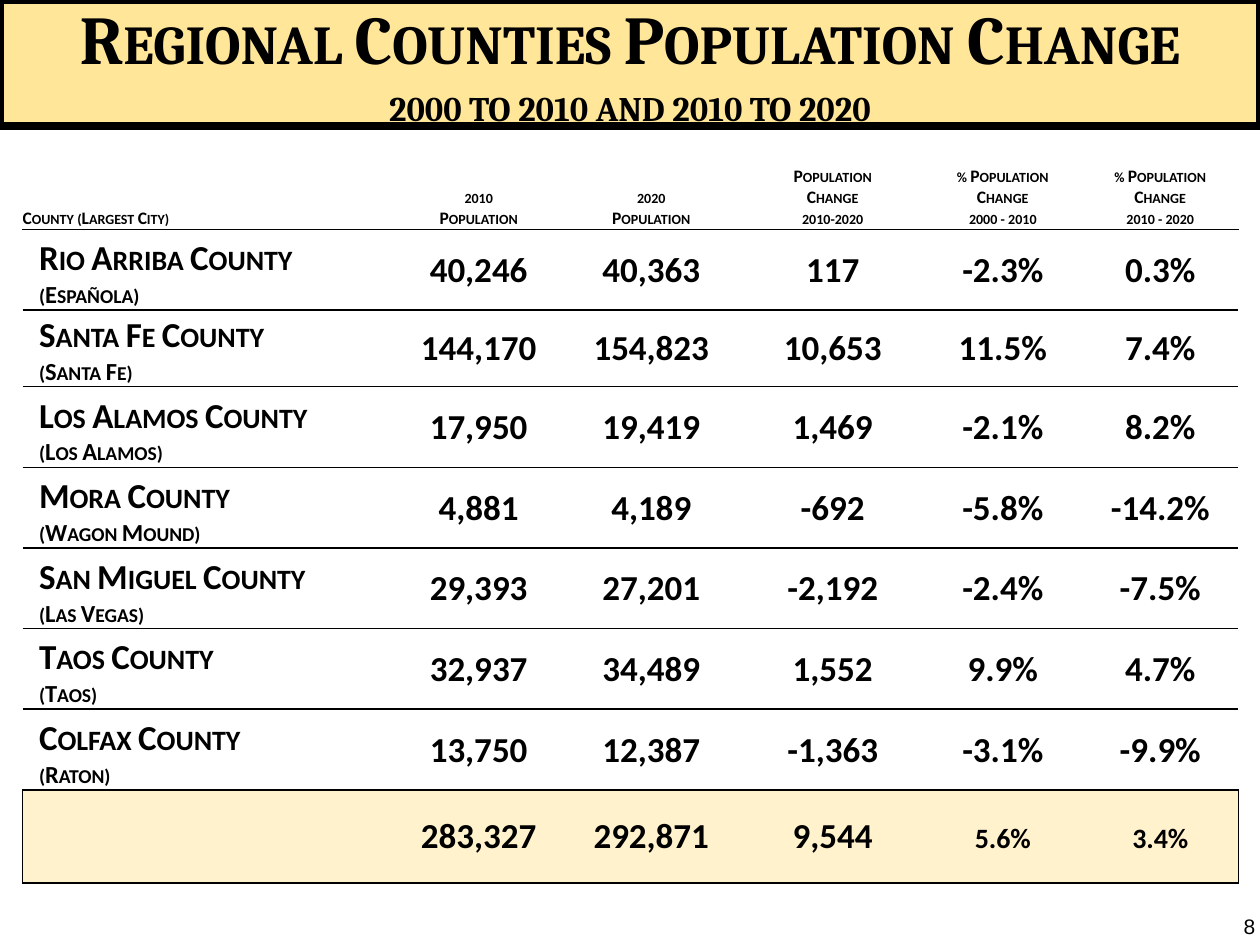
from typing import NamedTuple

from lxml.etree import SubElement
from pptx import Presentation
from pptx.dml.color import RGBColor
from pptx.enum.shapes import MSO_SHAPE as Shape
from pptx.enum.text import MSO_ANCHOR as Anchor, PP_ALIGN as Align
from pptx.oxml.ns import qn
from pptx.util import Inches, Pt

BLACK = RGBColor(0, 0, 0)
WHITE = RGBColor(0xFF, 0xFF, 0xFF)
GOLD = RGBColor(0xFF, 0xE6, 0x99)
CREAM = RGBColor(0xFF, 0xF2, 0xCC)

COLUMN_WIDTHS = (2.97, 1.3, 1.44, 1.44, 1.26, 1.24)
ROW_HEIGHTS = (0.74, 0.64, 0.61, 0.64, 0.64, 0.64, 0.64, 0.64, 0.74)


class Line(NamedTuple):
    text: str
    size: float
    small_caps: bool = True
    font: str = "Calibri"
    bold: bool = True


class County(NamedTuple):
    name: str
    largest_city: str
    figures: tuple[str, ...]


HEADINGS = (
    ("County (Largest City)",),
    ("2010", "Population"),
    ("2020", "Population"),
    ("Population", "Change", "2010-2020"),
    ("% Population", "Change", "2000 - 2010"),
    ("% Population", "Change", "2010 - 2020"),
)
COUNTIES = (
    County("Rio Arriba", "Española", ("40,246", "40,363", "117", "-2.3%", "0.3%")),
    County("Santa Fe", "Santa Fe", ("144,170", "154,823", "10,653", "11.5%", "7.4%")),
    County("Los Alamos", "Los Alamos", ("17,950", "19,419", "1,469", "-2.1%", "8.2%")),
    County("Mora", "Wagon Mound", ("4,881", "4,189", "-692", "-5.8%", "-14.2%")),
    County("San Miguel", "Las Vegas", ("29,393", "27,201", "-2,192", "-2.4%", "-7.5%")),
    County("Taos", "Taos", ("32,937", "34,489", "1,552", "9.9%", "4.7%")),
    County("Colfax", "Raton", ("13,750", "12,387", "-1,363", "-3.1%", "-9.9%")),
)
TOTALS = ("283,327", "292,871", "9,544", "5.6%", "3.4%")


def write(frame, lines: list[Line], align: Align, indent: float = 0) -> None:
    """Put each line in its own paragraph."""
    for index, line in enumerate(lines):
        paragraph = frame.add_paragraph() if index else frame.paragraphs[0]
        if indent:
            paragraph._p.get_or_add_pPr().set("marL", str(Inches(indent)))
        paragraph.alignment = align
        run = paragraph.add_run()
        run.text = line.text
        run.font.name = line.font
        run.font.size = Pt(line.size)
        run.font.bold = line.bold
        run.font.color.rgb = BLACK
        if line.small_caps:
            run._r.get_or_add_rPr().set("cap", "small")


def style_cell(cell, inset: float, anchor: Anchor, fill: RGBColor | None = None,
               **edges: RGBColor) -> None:
    """Set insets, anchor and fill, and draw the edges named L, R, T or B."""
    cell.margin_left = cell.margin_right = cell.margin_top = Inches(inset)
    cell.margin_bottom = 0
    cell.vertical_anchor = anchor
    properties = cell._tc.get_or_add_tcPr()
    for side in "LRTB":
        border = SubElement(properties, qn(f"a:ln{side}"), w=str(Pt(1)))
        if side in edges:
            color = SubElement(border, qn("a:solidFill"))
            SubElement(color, qn("a:srgbClr"), val=str(edges[side]))
        else:
            SubElement(border, qn("a:noFill"))
    if fill is None:
        cell.fill.background()
    else:
        cell.fill.solid()
        cell.fill.fore_color.rgb = fill


def add_population_table(slide) -> None:
    table = slide.shapes.add_table(
        len(ROW_HEIGHTS), len(COLUMN_WIDTHS), Inches(0.18), Inches(1.08),
        Inches(sum(COLUMN_WIDTHS)), Inches(sum(ROW_HEIGHTS))).table
    table.first_row = table.horz_banding = False
    for column, width in zip(table.columns, COLUMN_WIDTHS):
        column.width = Inches(width)
    for row, height in zip(table.rows, ROW_HEIGHTS):
        row.height = Inches(height)

    for column, heading in enumerate(HEADINGS):
        cell = table.cell(0, column)
        style_cell(cell, 0, Anchor.BOTTOM, L=WHITE, R=WHITE, T=WHITE, B=BLACK)
        write(cell.text_frame, [Line(text, 10) for text in heading],
              Align.CENTER if column else Align.LEFT)

    for row, county in enumerate(COUNTIES, start=1):
        label = table.cell(row, 0)
        style_cell(label, 0.01, Anchor.BOTTOM, T=BLACK, B=BLACK)
        write(label.text_frame,
              [Line(f"{county.name} County", 20), Line(f"({county.largest_city})", 14)],
              Align.LEFT, indent=0.12)
        for column, figure in enumerate(county.figures, start=1):
            cell = table.cell(row, column)
            style_cell(cell, 0.01, Anchor.MIDDLE, T=BLACK, B=BLACK)
            write(cell.text_frame, [Line(figure, 20, small_caps=False)], Align.CENTER)

    total_row = len(ROW_HEIGHTS) - 1
    style_cell(table.cell(total_row, 0), 0.01, Anchor.MIDDLE, CREAM,
               L=BLACK, T=BLACK, B=BLACK)
    for column, total in enumerate(TOTALS, start=1):
        cell = table.cell(total_row, column)
        right_edge = {"R": BLACK} if column == len(TOTALS) else {}
        style_cell(cell, 0.01, Anchor.MIDDLE, CREAM, T=BLACK, B=BLACK, **right_edge)
        write(cell.text_frame, [Line(total, 20, small_caps=total.endswith("%"))],
              Align.CENTER)


def add_title_banner(slide) -> None:
    banner = slide.shapes.add_shape(Shape.RECTANGLE, 0, 0, Inches(10), Inches(1))
    banner.shadow.inherit = False
    banner.fill.solid()
    banner.fill.fore_color.rgb = GOLD
    banner.line.color.rgb = BLACK
    banner.line.width = Pt(4.5)
    banner.text_frame.word_wrap = True
    banner.text_frame.vertical_anchor = Anchor.MIDDLE
    write(banner.text_frame,
          [Line("Regional Counties Population Change", 39.1, font="Cambria"),
           Line("2000 to 2010 and 2010 to 2020", 24.6, font="Cambria")], Align.CENTER)


def add_page_number(slide) -> None:
    frame = slide.shapes.add_textbox(
        Inches(7.98), Inches(7), Inches(2.08), Inches(0.5)).text_frame
    frame.word_wrap = True
    frame.vertical_anchor = Anchor.BOTTOM
    write(frame, [Line("8", 12, small_caps=False, font="Arial", bold=False)], Align.RIGHT)


def main() -> None:
    deck = Presentation()
    deck.slide_width, deck.slide_height = Inches(10), Inches(7.5)
    slide = deck.slides.add_slide(deck.slide_layouts[6])
    add_population_table(slide)
    add_title_banner(slide)
    add_page_number(slide)
    deck.save("out.pptx")


if __name__ == "__main__":
    main()
